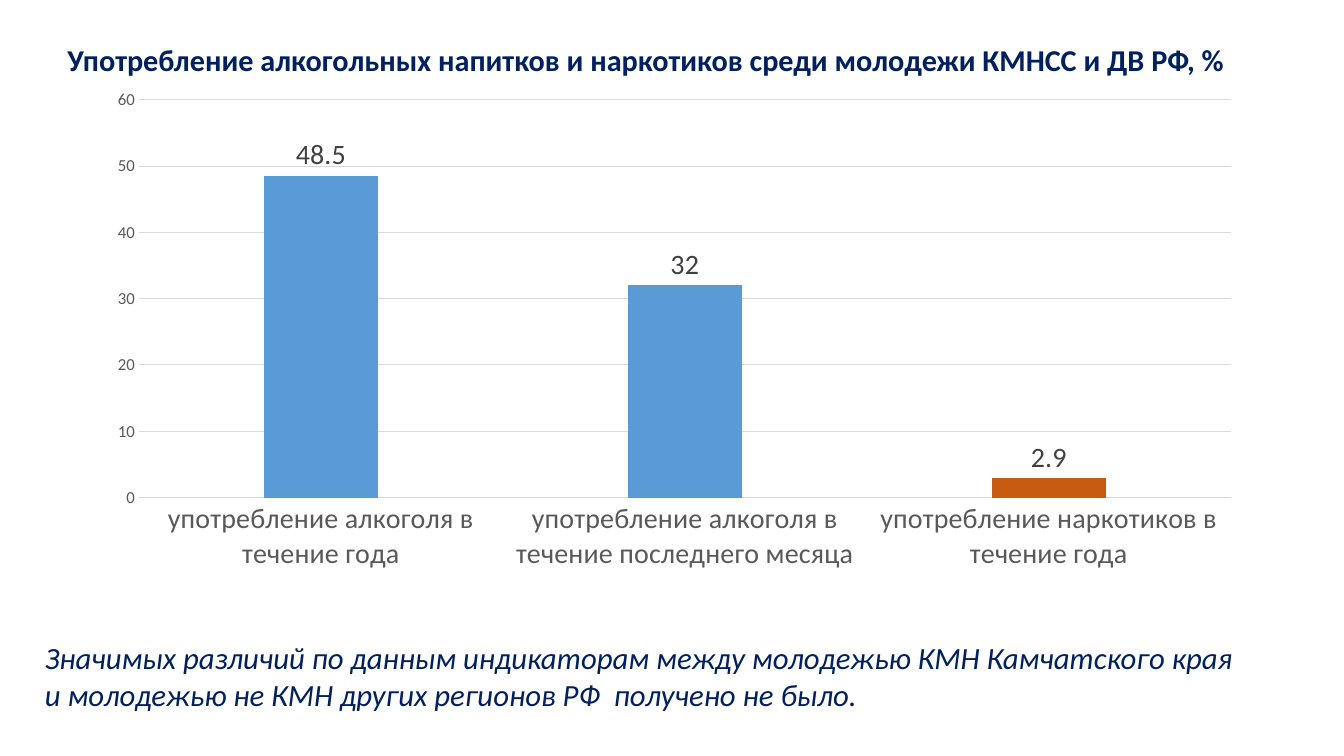
"""Build a slide with a column chart on alcohol and drug use among young people."""
from pptx import Presentation
from pptx.chart.data import CategoryChartData
from pptx.dml.color import RGBColor
from pptx.enum.chart import XL_CHART_TYPE, XL_LABEL_POSITION, XL_TICK_MARK
from pptx.enum.text import MSO_ANCHOR, MSO_AUTO_SIZE, PP_ALIGN
from pptx.util import Pt

FONT = "Calibri"
NAVY, BLUE, ORANGE = "002060", "5B9BD5", "C55A11"
GRID, AXIS_TEXT, LABEL_TEXT = "D9D9D9", "595959", "404040"

TITLE = "Употребление алкогольных напитков и наркотиков среди молодежи КМНСС и ДВ РФ, %"
USAGE = {
    "употребление алкоголя в течение года": 48.5,
    "употребление алкоголя в течение последнего месяца": 32,
    "употребление наркотиков в течение года": 2.9,
}
NOTE = (
    "Значимых различий по данным индикаторам между молодежью КМН Камчатского края",
    "и молодежью не КМН других регионов РФ  получено не было.",
)


def rgb(color):
    """Turn a hex string into a colour."""
    return RGBColor.from_string(color)


def style_font(font, size, color, bold=False, italic=False):
    """Set the typeface, size, colour and emphasis of a font."""
    font.name, font.size = FONT, Pt(size)
    font.bold, font.italic = bold, italic
    font.color.rgb = rgb(color)


def style_line(line, color):
    """Set a thin solid line."""
    line.color.rgb = rgb(color)
    line.width = Pt(0.75)


def fill_solid(fmt, color):
    """Fill a chart element with one colour."""
    fmt.fill.solid()
    fmt.fill.fore_color.rgb = rgb(color)


def set_title(slide, text, left, top, width, height):
    """Place and format the title placeholder."""
    sp = slide.shapes.title
    sp.left, sp.top, sp.width, sp.height = Pt(left), Pt(top), Pt(width), Pt(height)
    tf = sp.text_frame
    tf.text = text
    tf.word_wrap = True
    tf.auto_size = MSO_AUTO_SIZE.NONE
    tf.vertical_anchor = MSO_ANCHOR.TOP
    p = tf.paragraphs[0]
    p.alignment = PP_ALIGN.LEFT
    p.line_spacing = 0.9
    style_font(p.runs[0].font, 21.6, NAVY, bold=True)


def add_note(slide, lines, left, top, width, height):
    """Add an italic text box with one paragraph per line."""
    sp = slide.shapes.add_textbox(Pt(left), Pt(top), Pt(width), Pt(height))
    tf = sp.text_frame
    tf.word_wrap = True
    tf.text = "\n".join(lines)
    for p in tf.paragraphs:
        style_font(p.runs[0].font, 22, NAVY, italic=True)


def style_axes(chart):
    """Format the category and value axes."""
    cat, val = chart.category_axis, chart.value_axis
    for axis, size in ((cat, 20), (val, 12)):
        axis.major_tick_mark = axis.minor_tick_mark = XL_TICK_MARK.NONE
        style_font(axis.tick_labels.font, size, AXIS_TEXT)
    style_line(cat.format.line, GRID)
    val.format.line.fill.background()
    val.minimum_scale, val.maximum_scale, val.major_unit = 0, 60, 10
    style_line(val.major_gridlines.format.line, GRID)


def add_column_chart(slide, values, left, top, width, height):
    """Add a labelled column chart whose last column is highlighted."""
    data = CategoryChartData()
    data.categories = list(values)
    data.add_series("Series 1", list(values.values()))
    chart = slide.shapes.add_chart(
        XL_CHART_TYPE.COLUMN_CLUSTERED, Pt(left), Pt(top), Pt(width), Pt(height), data
    ).chart
    chart.has_title = chart.has_legend = False
    style_font(chart.font, 10, "000000")
    style_axes(chart)
    plot = chart.plots[0]
    plot.gap_width, plot.overlap = 219, -27
    plot.vary_by_categories = False
    series = plot.series[0]
    fill_solid(series.format, BLUE)
    fill_solid(series.points[len(values) - 1].format, ORANGE)
    labels = series.data_labels
    labels.show_value = True
    labels.position = XL_LABEL_POSITION.OUTSIDE_END
    style_font(labels.font, 20, LABEL_TEXT)


def main():
    """Build and save the slide."""
    prs = Presentation()
    prs.slide_width, prs.slide_height = Pt(960), Pt(540)
    slide = prs.slides.add_slide(prs.slide_layouts[5])
    set_title(slide, TITLE, 41, 29, 880, 57)
    add_column_chart(slide, USAGE, 67.7, 57, 828, 358)
    add_note(slide, NOTE, 25, 453, 896, 60.5)
    prs.save("out.pptx")


if __name__ == "__main__":
    main()
